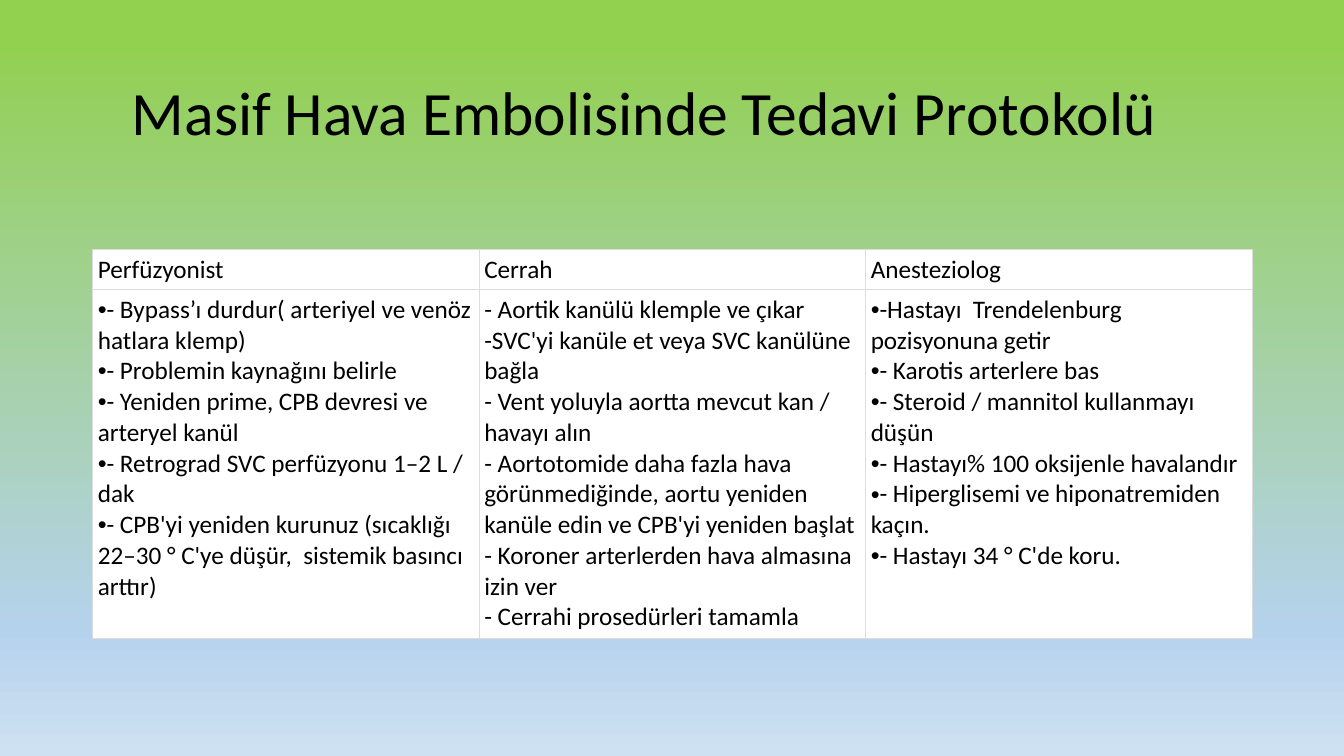
import copy

import lxml.etree
import pptx
import pptx.dml.color
import pptx.enum.text
import pptx.oxml.ns
import pptx.util

Inches = pptx.util.Inches
Pt = pptx.util.Pt
RGBColor = pptx.dml.color.RGBColor
qn = pptx.oxml.ns.qn

BLACK = RGBColor(0x00, 0x00, 0x00)
WHITE = RGBColor(0xFF, 0xFF, 0xFF)
GREY = RGBColor(0xDC, 0xDC, 0xDC)
GREEN = RGBColor(0x92, 0xD0, 0x50)
BLUE = RGBColor(0xB5, 0xD2, 0xEC)
PALE = RGBColor(0xCE, 0xE1, 0xF2)

TITLE = "Masif Hava Embolisinde Tedavi Protokolü"
HEADS = ["Perfüzyonist", "Cerrah", "Anesteziolog"]
PUMP = [
    "- Bypass’ı durdur( arteriyel ve venöz hatlara klemp)",
    "- Problemin kaynağını belirle",
    "- Yeniden prime, CPB devresi ve arteryel kanül",
    "- Retrograd SVC perfüzyonu 1–2 L / dak",
    "- CPB'yi yeniden kurunuz (sıcaklığı 22–30 ° C'ye düşür,  sistemik basıncı arttır)",
]
SURGEON = [
    "- Aortik kanülü klemple ve çıkar",
    "-SVC'yi kanüle et veya SVC kanülüne bağla",
    "- Vent yoluyla aortta mevcut kan / havayı alın",
    "- Aortotomide daha fazla hava görünmediğinde, aortu yeniden kanüle edin ve CPB'yi yeniden başlat",
    "- Koroner arterlerden hava almasına izin ver",
    "- Cerrahi prosedürleri tamamla",
]
DOCTOR = [
    "-Hastayı  Trendelenburg pozisyonuna getir",
    "- Karotis arterlere bas",
    "- Steroid / mannitol kullanmayı düşün",
    "- Hastayı% 100 oksijenle havalandır",
    "- Hiperglisemi ve hiponatremiden kaçın.",
    "- Hastayı 34 ° C'de koru.",
]


class Page:
    def __init__(self, slide, font, ink):
        self.slide, self.font, self.ink = slide, font, ink

    def backdrop(self, stops):
        """Fill the background from top to bottom with (position, colour) stops."""
        fill = self.slide.background.fill
        fill.gradient()
        fill.gradient_angle = 270
        group = next(self.slide.element.iter(qn("a:gsLst")))
        for _ in stops[2:]:
            group.append(copy.deepcopy(group[0]))
        for stop, (place, color) in zip(fill.gradient_stops, stops):
            stop.position = place
            stop.color.rgb = color

    def add_text(self, para, text, size):
        run = para.add_run()
        run.text = text
        run.font.name = self.font
        run.font.size = Pt(size)
        run.font.color.rgb = self.ink

    def title(self, text, left, top, width, height):
        box = self.slide.shapes.add_textbox(
            Inches(left), Inches(top), Inches(width), Inches(height))
        frame = box.text_frame
        frame.word_wrap = True
        frame.vertical_anchor = pptx.enum.text.MSO_ANCHOR.MIDDLE
        para = frame.paragraphs[0]
        para.line_spacing = 0.9
        self.add_text(para, text, 44)

    def table(self, left, top, width, heights, cols):
        shape = self.slide.shapes.add_table(
            len(heights), cols, Inches(left), Inches(top),
            Inches(width), Inches(sum(heights)))
        table = shape.table
        table.first_row = table.horz_banding = False
        for row, height in zip(table.rows, heights):
            row.height = Inches(height)
        for cell in table.iter_cells():
            self.frame(cell)
        return table

    def frame(self, cell):
        """Give a cell its margins, border and fill."""
        cell.margin_left = cell.margin_right = Inches(0.05)
        cell.margin_top = cell.margin_bottom = Inches(0.05)
        props = cell._tc.get_or_add_tcPr()
        for side in "LRTB":
            line = lxml.etree.SubElement(props, qn("a:ln" + side), w=str(Pt(0.75)))
            solid = lxml.etree.SubElement(line, qn("a:solidFill"))
            lxml.etree.SubElement(solid, qn("a:srgbClr"), val=str(GREY))
        cell.fill.solid()
        cell.fill.fore_color.rgb = WHITE

    def lines(self, cell, texts):
        """Put the texts in one paragraph with line breaks."""
        para = cell.text_frame.paragraphs[0]
        for i, text in enumerate(texts):
            if i:
                para.add_line_break()
            self.add_text(para, text, 18)

    def bullets(self, cell, texts):
        frame = cell.text_frame
        for i, text in enumerate(texts):
            para = frame.add_paragraph() if i else frame.paragraphs[0]
            props = para._p.get_or_add_pPr()
            props.set("marL", "0")
            props.set("indent", "0")
            lxml.etree.SubElement(props, qn("a:buFont"), typeface="Arial")
            lxml.etree.SubElement(props, qn("a:buChar"), char="•")
            self.add_text(para, text, 18)


def main():
    deck = pptx.Presentation()
    deck.slide_width, deck.slide_height = Inches(13.33), Inches(7.5)
    page = Page(deck.slides.add_slide(deck.slide_layouts[6]), "Calibri", BLACK)
    page.backdrop([(0.05, GREEN), (0.83, BLUE), (1, PALE)])
    page.title(TITLE, 1.21, 0.42, 11.5, 1.45)
    table = page.table(0.92, 2.47, 11.5, [0.4, 3.46], len(HEADS))
    for col, head in enumerate(HEADS):
        page.lines(table.cell(0, col), [head])
    page.bullets(table.cell(1, 0), PUMP)
    page.lines(table.cell(1, 1), SURGEON)
    page.bullets(table.cell(1, 2), DOCTOR)
    deck.save("out.pptx")


if __name__ == "__main__":
    main()
